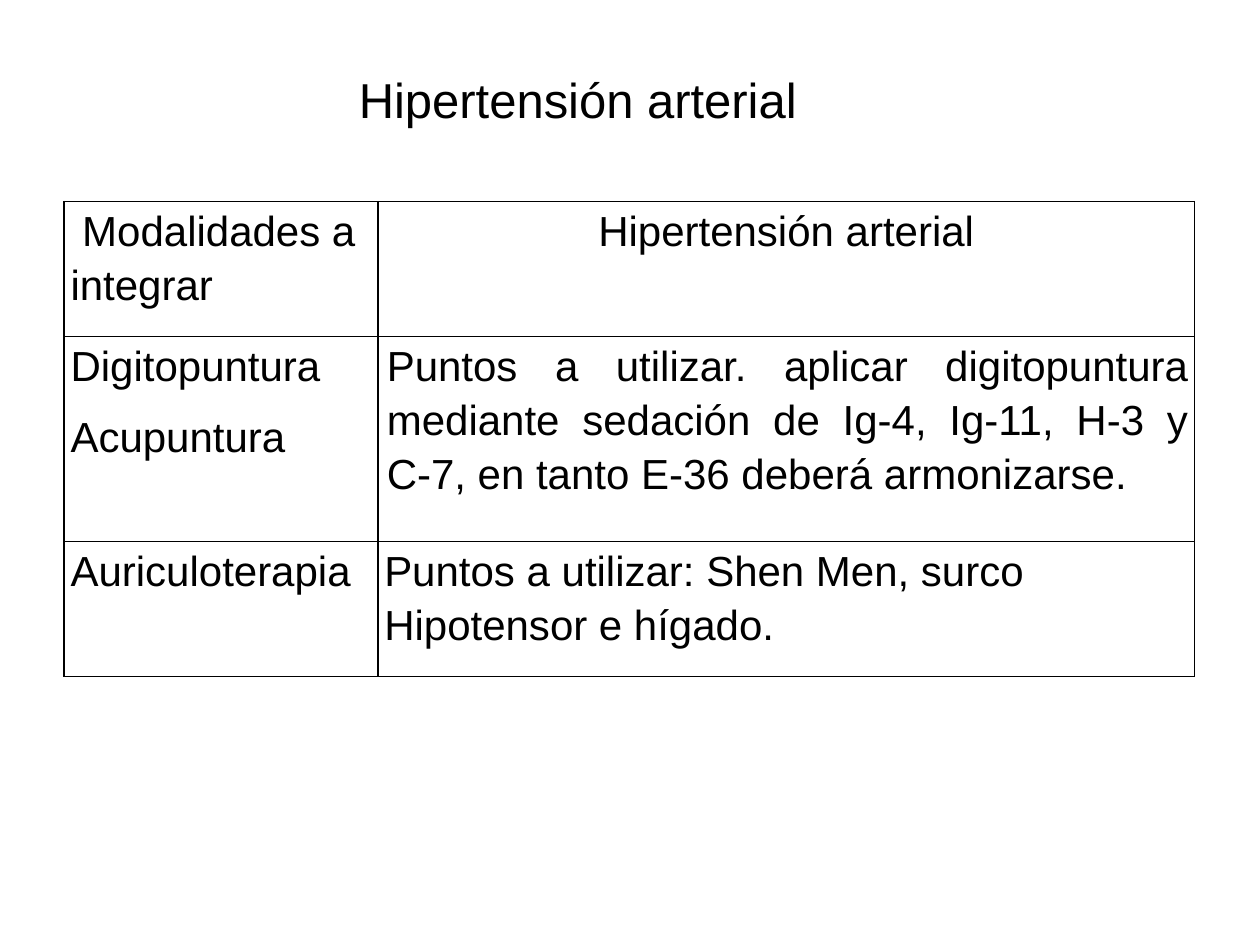
from pptx import Presentation
from pptx.dml.color import RGBColor
from pptx.enum.text import MSO_ANCHOR, MSO_AUTO_SIZE, PP_ALIGN
from pptx.oxml import parse_xml
from pptx.oxml.ns import nsdecls
from pptx.util import Inches, Pt

LEFT, CENTER, JUSTIFY = PP_ALIGN.LEFT, PP_ALIGN.CENTER, PP_ALIGN.JUSTIFY
TOP = MSO_ANCHOR.TOP
BLACK = RGBColor(0, 0, 0)
FONT = "Arial"
TITLE_ONLY = 5

# Content: each cell is its paragraphs and their format
TITLE = "Hipertensión arterial"
ROWS = [
    [(["\u00a0Modalidades a integrar"], {}),
     (["Hipertensión arterial"], {"align": CENTER})],
    [(["Digitopuntura", "Acupuntura"], {"space_after": 10}),
     (["Puntos a utilizar. aplicar digitopuntura mediante sedación de Ig-4, "
       "Ig-11, H-3 y C-7, en tanto E-36 deberá armonizarse."],
      {"align": JUSTIFY, "indent": 0.02})],
    [(["Auriculoterapia"], {"space_after": 10}),
     (["Puntos a utilizar: Shen Men, surco Hipotensor e hígado."], {})],
]
COLUMN_WIDTHS = [2.49, 6.48]
ROW_HEIGHTS = [1.07, 1.63, 1.07]


def write_text(frame, paragraphs, size=24, align=LEFT, space_after=0, indent=0):
    for index, text in enumerate(paragraphs):
        paragraph = frame.paragraphs[0] if index == 0 else frame.add_paragraph()
        paragraph.alignment = align
        paragraph.line_spacing = 1.15
        paragraph.space_before = Pt(0)
        paragraph.space_after = Pt(space_after)
        if indent:
            paragraph._p.get_or_add_pPr().set("marL", str(Inches(indent)))
        run = paragraph.add_run()
        run.text = text
        run.font.name = FONT
        run.font.size = Pt(size)
        run.font.color.rgb = BLACK


def add_borders(cell):
    properties = cell._tc.get_or_add_tcPr()
    for index, side in enumerate(("lnL", "lnR", "lnT", "lnB")):
        properties.insert(index, parse_xml(
            f'<a:{side} {nsdecls("a")} w="{Pt(1)}"><a:solidFill>'
            f'<a:srgbClr val="{BLACK}"/></a:solidFill></a:{side}>'))


presentation = Presentation()
presentation.slide_width = Inches(10)
presentation.slide_height = Inches(7.5)
slide = presentation.slides.add_slide(presentation.slide_layouts[TITLE_ONLY])

# Title
title = slide.shapes.title
title.left, title.top = Inches(2.72), Inches(0.43)
title.width, title.height = Inches(3.73), Inches(0.6)
title.text_frame.word_wrap = False
title.text_frame.auto_size = MSO_AUTO_SIZE.SHAPE_TO_FIT_TEXT
title.text_frame.vertical_anchor = TOP
write_text(title.text_frame, [TITLE], size=28, align=CENTER)

# Table of treatments
table = slide.shapes.add_table(
    len(ROWS), len(COLUMN_WIDTHS), Inches(0.51), Inches(1.6),
    Inches(sum(COLUMN_WIDTHS)), Inches(sum(ROW_HEIGHTS))).table
table.first_row = False
table.horz_banding = False
for column, width in zip(table.columns, COLUMN_WIDTHS):
    column.width = Inches(width)
for row, height, contents in zip(table.rows, ROW_HEIGHTS, ROWS):
    row.height = Inches(height)
    for cell, (paragraphs, text_format) in zip(row.cells, contents):
        cell.margin_left = cell.margin_right = Inches(0.05)
        cell.margin_top = cell.margin_bottom = 0
        cell.vertical_anchor = TOP
        cell.fill.background()
        add_borders(cell)
        write_text(cell.text_frame, paragraphs, **text_format)

presentation.save("out.pptx")
